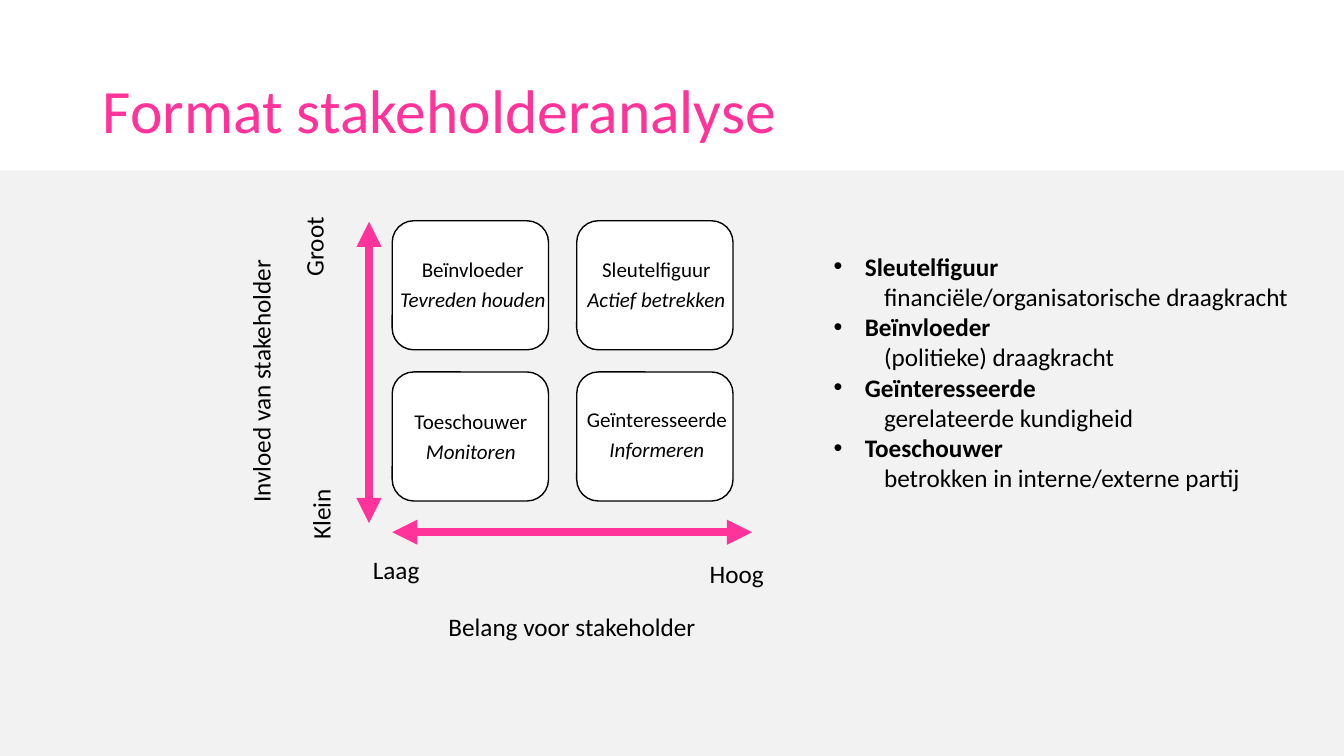
from lxml import etree
from pptx import Presentation
from pptx.dml.color import RGBColor
from pptx.enum.shapes import MSO_CONNECTOR, MSO_SHAPE
from pptx.enum.text import MSO_ANCHOR, MSO_AUTO_SIZE, PP_ALIGN
from pptx.oxml.ns import qn
from pptx.util import Inches, Pt

RECTANGLE = MSO_SHAPE.RECTANGLE
ROUNDED = MSO_SHAPE.ROUNDED_RECTANGLE
STRAIGHT = MSO_CONNECTOR.STRAIGHT
MIDDLE = MSO_ANCHOR.MIDDLE
GROW = MSO_AUTO_SIZE.SHAPE_TO_FIT_TEXT
CENTER = PP_ALIGN.CENTER
LEFT = PP_ALIGN.LEFT

FONT = "Calibri"
PINK, BLACK, WHITE, GREY = "FF3399", "000000", "FFFFFF", "F2F2F2"

# Quadrants: role, approach, column, row, label left, top, width
QUADRANTS = [
    ("Beïnvloeder", "Tevreden houden", 0, 0, 3.89, 2.25, 1.6),
    ("Sleutelfiguur", "Actief betrekken", 1, 0, 5.71, 2.25, 1.6),
    ("Toeschouwer", "Monitoren", 0, 1, 3.97, 3.76, 1.4),
    ("Geïnteresseerde", "Informeren", 1, 1, 5.64, 3.74, 1.75),
]

# Axis labels: text, left, top, width, height, rotation
AXIS_LABELS = [
    ("Belang voor stakeholder", 4.35, 6.02, 2.97, 0.4, 0),
    ("Groot", 2.66, 2.29, 0.8, 0.3, 270),
    ("Hoog", 6.94, 5.49, 0.9, 0.4, 0),
    ("Klein", 2.73, 4.9, 0.8, 0.3, 270),
    ("Laag", 3.6, 5.45, 0.8, 0.4, 0),
    ("Invloed van stakeholder", 0.99, 3.29, 3.19, 0.4, 270),
]

# Roles: name, contribution, level and indent of the contribution
ROLES = [
    ("Sleutelfiguur", "\tfinanciële/organisatorische draagkracht", 1, 0.5),
    ("Beïnvloeder", "(politieke) draagkracht", 2, 1),
    ("Geïnteresseerde", "gerelateerde kundigheid", 2, 1),
    ("Toeschouwer", "betrokken in interne/externe partij", 2, 1),
]


def rgb(color):
    return RGBColor.from_string(color)


def add_run(paragraph, text, size, color=BLACK, bold=False, italic=False):
    run = paragraph.add_run()
    run.text = text
    font = run.font
    font.name, font.size, font.bold, font.italic = FONT, Pt(size), bold, italic
    font.color.rgb = rgb(color)


def next_paragraph(frame, index):
    return frame.add_paragraph() if index else frame.paragraphs[0]


def add_panel(slide, preset, left, top, width, height, fill, outline=None):
    panel = slide.shapes.add_shape(
        preset, Inches(left), Inches(top), Inches(width), Inches(height))
    panel.shadow.inherit = False
    panel.fill.solid()
    panel.fill.fore_color.rgb = rgb(fill)
    if outline:
        panel.line.color.rgb = rgb(outline)
        panel.line.width = Pt(1)
    else:
        panel.line.fill.background()
    return panel


def add_text_frame(slide, left, top, width, height, rotation=0):
    box = slide.shapes.add_textbox(
        Inches(left), Inches(top), Inches(width), Inches(height))
    box.rotation = rotation
    box.text_frame.word_wrap = True
    return box.text_frame


def add_quadrant(slide, role, approach, column, row, left, top, width):
    add_panel(slide, ROUNDED, 3.89 + 1.83 * column, 2.19 + 1.5 * row,
              1.55, 1.28, WHITE, BLACK)
    frame = add_text_frame(slide, left, top, width, 1.16)
    frame.vertical_anchor = MIDDLE
    frame.margin_left = frame.margin_right = Inches(0.06)
    frame.margin_top = frame.margin_bottom = Inches(0.06)
    for index, text in enumerate((role, approach)):
        paragraph = next_paragraph(frame, index)
        paragraph.alignment = CENTER
        paragraph.line_spacing = 0.9
        if index:
            paragraph.space_before = Pt(5.2)
        add_run(paragraph, text, 15, italic=index == 1)


def add_axis_label(slide, text, *place):
    frame = add_text_frame(slide, *place)
    frame.auto_size = GROW
    add_run(frame.paragraphs[0], text, 18)


def add_axis_arrow(slide, x1, y1, x2, y2):
    arrow = slide.shapes.add_connector(
        STRAIGHT, Inches(x1), Inches(y1), Inches(x2), Inches(y2))
    arrow.line.color.rgb = rgb(PINK)
    arrow.line.width = Pt(6)
    outline = arrow.line._get_or_add_ln()
    for end in ("a:headEnd", "a:tailEnd"):
        etree.SubElement(outline, qn(end), type="triangle")
    etree.SubElement(arrow._element.spPr, qn("a:effectLst"))


def set_indent(paragraph, level, margin, hanging=0, bullet=False):
    paragraph.level = level
    properties = paragraph._p.get_or_add_pPr()
    properties.set("marL", str(Inches(margin)))
    properties.set("indent", str(-Inches(hanging)))
    if bullet:
        color = etree.SubElement(properties, qn("a:buClr"))
        etree.SubElement(color, qn("a:srgbClr"), val=BLACK)
        etree.SubElement(properties, qn("a:buFont"), typeface="Arial")
        etree.SubElement(properties, qn("a:buChar"), char="•")
    else:
        etree.SubElement(properties, qn("a:buNone"))


def add_roles(slide):
    frame = add_text_frame(slide, 7.67, 2.44, 5.66, 2.83)
    frame.auto_size = GROW
    for index, (role, contribution, level, margin) in enumerate(ROLES):
        heading = next_paragraph(frame, index)
        set_indent(heading, 1, 0.81, 0.31, bullet=True)
        add_run(heading, role, 18, bold=True)
        detail = frame.add_paragraph()
        set_indent(detail, level, margin)
        add_run(detail, contribution, 18)


def set_title(slide, text):
    title = slide.shapes.title
    title.left, title.top = Inches(0.92), Inches(0.4)
    title.width, title.height = Inches(11.5), Inches(1.45)
    title.text_frame.vertical_anchor = MIDDLE
    title.text_frame.word_wrap = True
    paragraph = title.text_frame.paragraphs[0]
    paragraph.alignment = LEFT
    paragraph.line_spacing = 0.9
    add_run(paragraph, text, 44, PINK)


def main():
    deck = Presentation()
    deck.slide_width, deck.slide_height = Inches(13.33), Inches(7.5)
    slide = deck.slides.add_slide(deck.slide_layouts[5])

    # Grey content area behind the title
    band = add_panel(slide, RECTANGLE, 0, 1.69, 13.33, 5.81, GREY)
    slide.shapes._spTree.insert(2, band._element)
    set_title(slide, "Format stakeholderanalyse")

    # Matrix with its axes
    for quadrant in QUADRANTS:
        add_quadrant(slide, *quadrant)
    for label in AXIS_LABELS:
        add_axis_label(slide, *label)
    add_axis_arrow(slide, 3.66, 2.2, 3.66, 5.19)
    add_axis_arrow(slide, 7.46, 5.28, 3.89, 5.28)

    # Explanation of the roles
    add_roles(slide)
    deck.save("out.pptx")


if __name__ == "__main__":
    main()
